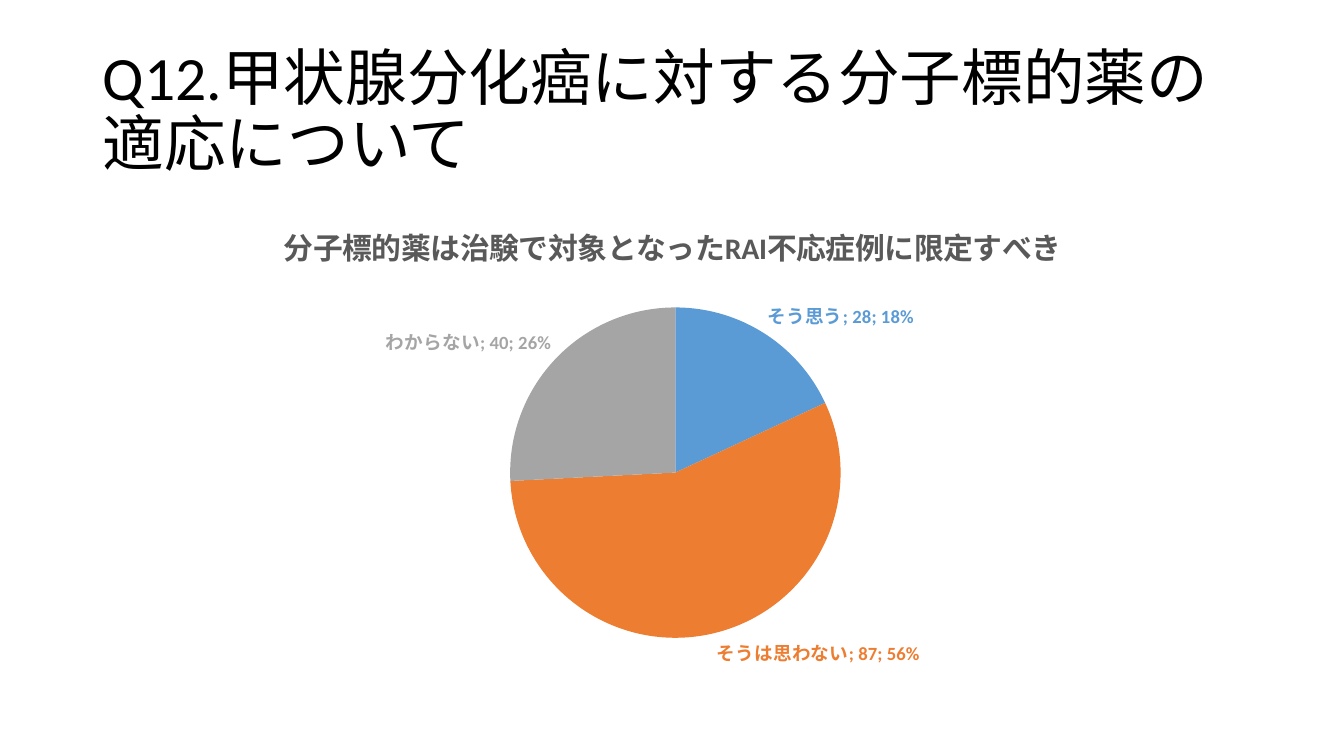
from dataclasses import dataclass

from lxml import etree
from pptx import Presentation
from pptx.chart.data import CategoryChartData
from pptx.dml.color import RGBColor
from pptx.enum.chart import XL_CHART_TYPE, XL_LABEL_POSITION
from pptx.enum.text import MSO_ANCHOR
from pptx.oxml import parse_xml
from pptx.oxml.ns import nsdecls, qn
from pptx.util import Inches, Pt

PIE = XL_CHART_TYPE.PIE
OUTSIDE_END = XL_LABEL_POSITION.OUTSIDE_END
MIDDLE = MSO_ANCHOR.MIDDLE

HEADING = "Q12.甲状腺分化癌に対する分子標的薬の適応について"
QUESTION = "分子標的薬は治験で対象となったRAI不応症例に限定すべき"
ANSWERS = {"そう思う": 28, "そうは思わない": 87, "わからない": 40}
PIE_AREA = {"x": 0.36, "y": 0.22, "w": 0.285, "h": 0.69}


@dataclass(frozen=True)
class Theme:
    font: str = "Calibri"
    heading_size: float = 44
    chart_title_size: float = 21.3
    label_size: float = 13.3
    text: str = "000000"
    chart_title: str = "595959"
    slices: tuple = ("5B9BD5", "ED7D31", "A5A5A5")


class SlideBuilder:
    def __init__(self, slide, theme):
        self.slide = slide
        self.theme = theme

    def style(self, font, size, color, bold=False):
        font.name = self.theme.font
        font.size = Pt(size)
        font.bold = bold
        font.color.rgb = RGBColor.from_string(color)

    def add_heading(self, text, left, top, width, height):
        frame = self.slide.shapes.add_textbox(left, top, width, height).text_frame
        frame.word_wrap = True
        frame.vertical_anchor = MIDDLE
        paragraph = frame.paragraphs[0]
        paragraph.text = text
        paragraph.line_spacing = 0.9
        self.style(paragraph.font, self.theme.heading_size, self.theme.text)

    def add_pie(self, title, answers, left, top, width, height):
        data = CategoryChartData()
        data.categories = list(answers)
        data.add_series(title, list(answers.values()))
        chart = self.slide.shapes.add_chart(PIE, left, top, width, height, data).chart
        self.style(chart.font, 10, self.theme.text)
        chart.has_legend = False
        chart.has_title = True
        paragraph = chart.chart_title.text_frame.paragraphs[0]
        paragraph.text = title
        self.style(paragraph.font, self.theme.chart_title_size,
                   self.theme.chart_title, bold=True)

        plot = chart.plots[0]
        plot.vary_by_categories = True
        for index, color in enumerate(self.theme.slices):
            point = plot.series[0].points[index]
            point.format.fill.solid()
            point.format.fill.fore_color.rgb = RGBColor.from_string(color)
            self.style(point.data_label.font, self.theme.label_size, color, bold=True)
            point.data_label.position = OUTSIDE_END
        self.show_category_and_percent(chart)
        self.place_plot(chart, PIE_AREA)

    def show_category_and_percent(self, chart):
        """Add category and percentage to the value in every point label."""
        for label in chart.element.iter(qn("c:dLbl")):
            for tag in ("c:showCatName", "c:showVal", "c:showPercent"):
                label.find(qn(tag)).set("val", "1")
            etree.SubElement(label, qn("c:separator")).text = "; "

    def place_plot(self, chart, area):
        """Fix the inner plot area, given as fractions of the chart."""
        sizes = "".join(f'<c:{key} val="{value}"/>' for key, value in area.items())
        layout = parse_xml(
            f'<c:layout {nsdecls("c")}><c:manualLayout><c:layoutTarget val="inner"/>'
            f'<c:xMode val="edge"/><c:yMode val="edge"/>{sizes}'
            "</c:manualLayout></c:layout>")
        plot_area = next(chart.element.iter(qn("c:plotArea")))
        for previous in plot_area.findall(qn("c:layout")):
            plot_area.remove(previous)
        plot_area.insert(0, layout)


def main():
    presentation = Presentation()
    presentation.slide_width = Inches(13.33)
    presentation.slide_height = Inches(7.5)
    slide = presentation.slides.add_slide(presentation.slide_layouts[6])
    builder = SlideBuilder(slide, Theme())
    left, width = Inches(0.92), Inches(11.5)
    builder.add_heading(HEADING, left, Inches(0.4), width, Inches(1.45))
    builder.add_pie(QUESTION, ANSWERS, left, Inches(2), width, Inches(4.76))
    presentation.save("out.pptx")


if __name__ == "__main__":
    main()
